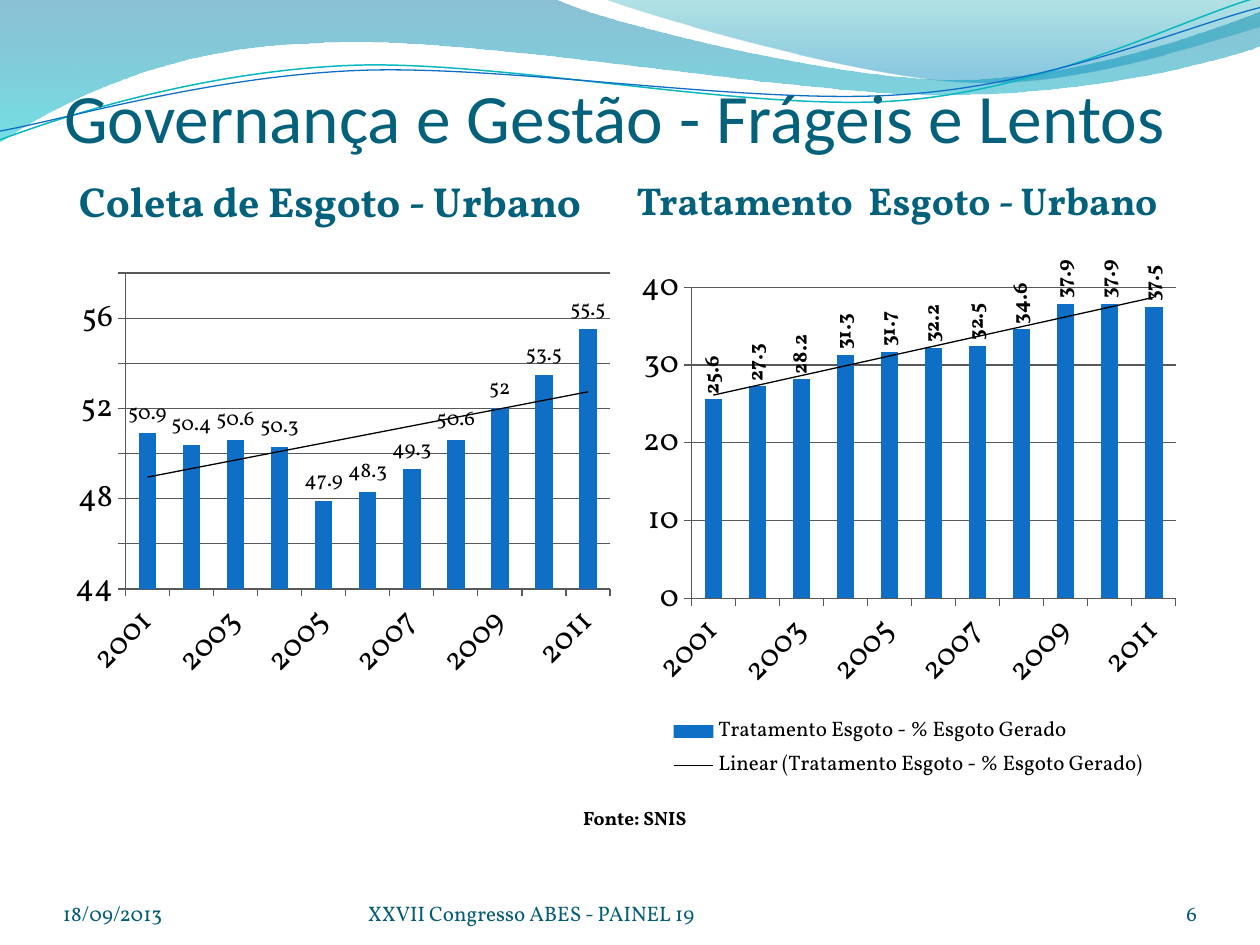
from lxml import etree
from pptx import Presentation
from pptx import util as u
from pptx.chart.data import CategoryChartData
from pptx.dml.color import RGBColor
from pptx.enum import chart as charts, text
from pptx.oxml import parse_xml
from pptx.oxml.ns import nsdecls, qn

TEAL = RGBColor(0x04, 0x61, 0x7B)
FOOTER = RGBColor(0x04, 0x5D, 0x75)
BLUE = RGBColor(0x0F, 0x6F, 0xC6)
AQUA = RGBColor(0x0A, 0xB8, 0xBF)
BLACK = RGBColor(0, 0, 0)
GRAY = RGBColor(0x59, 0x59, 0x59)
FONT = "Vollkorn"
LEFT, RIGHT = text.PP_ALIGN.LEFT, text.PP_ALIGN.RIGHT
MIDDLE, BOTTOM = text.MSO_ANCHOR.MIDDLE, text.MSO_ANCHOR.BOTTOM

# Content
TITLE = "Governança e Gestão - Frágeis e Lentos"
YEARS = [str(year) for year in range(2001, 2012)]
PANELS = [
    dict(heading=" Coleta de Esgoto - Urbano", size=24, name="Series 1",
         values=[50.9, 50.4, 50.6, 50.3, 47.9, 48.3, 49.3, 50.6, 52, 53.5, 55.5],
         top=2.1, height=3.39, legend=False, bold=False, turn=0),
    dict(heading="Tratamento  Esgoto - Urbano", size=22.2,
         name="Tratamento Esgoto - % Esgoto Gerado",
         values=[25.6, 27.3, 28.2, 31.3, 31.7, 32.2, 32.5, 34.6, 37.9, 37.9, 37.5],
         top=2.02, height=4.21, legend=True, bold=True, turn=-90),
]
COLUMNS, COLUMN_WIDTH = (0.51, 5), 4.42
FOOTERS = [
    ("6", 8.67, 0.83, RIGHT),
    ("18/09/2013", 0.5, 2.33, LEFT),
    ("XXVII Congresso ABES - PAINEL 19", 2.92, 3.67, LEFT),
]

# Header waves: a pair is a corner, six numbers are a Bézier curve.
# Gradient stops are position, colour and opacity in percent.
BANDS = [
    ([(0, 0), (4.4, -0.01), (4.76, 0.17, 6.64, 0.63, 7.58, 0.63),
      (8.53, 0.63, 9.58, 0.26, 10, 0.09), (10.01, 0.36),
      (9.83, 0.44, 8.7, 0.76, 7.46, 0.75), (6.22, 0.75, 3.82, 0.28, 2.57, 0.34),
      (1.29, 0.36, 0.46, 0.83, -0.01, 1.13)],
     [(0, "0074A1", 45), (100, "00C6CF", 55)]),
    ([(4.79, -0.01), (5.09, 0.11, 6.82, 0.62, 7.69, 0.65),
      (8.56, 0.69, 9.61, 0.32, 10, 0.21), (10, 0)],
     [(0, "00A1A9", 30), (80, "008BBF", 45)]),
]
WAVES = [
    ([(0, 1.11), (0.48, 0.93, 1.58, 0.57, 2.77, 0.52),
      (3.95, 0.47, 5.93, 0.89, 7.13, 0.8), (8.33, 0.71, 9.38, 0.15, 9.98, -0.02)],
     AQUA, 0.85),
    ([(0, 1.04), (0.47, 0.96, 1.64, 0.61, 2.83, 0.56),
      (4.03, 0.51, 5.97, 0.84, 7.17, 0.75), (8.36, 0.67, 9.41, 0.21, 10, 0.06)],
     BLUE, 0.75),
]


def place(shape, left, top, width, height):
    shape.left, shape.top = u.Inches(left), u.Inches(top)
    shape.width, shape.height = u.Inches(width), u.Inches(height)


def write(shape, words, size, color, font=FONT, bold=False, align=LEFT,
          anchor=text.MSO_ANCHOR.TOP, insets=(0, 0, 0, 0)):
    frame = shape.text_frame
    frame.word_wrap, frame.auto_size = True, text.MSO_AUTO_SIZE.NONE
    frame.vertical_anchor = anchor
    (frame.margin_left, frame.margin_top, frame.margin_right,
     frame.margin_bottom) = [u.Inches(inset) for inset in insets]
    paragraph = frame.paragraphs[0]
    paragraph.alignment = align
    run = paragraph.add_run()
    run.text = words
    run.font.size, run.font.name, run.font.bold = u.Pt(size), font, bold
    run.font.color.rgb = color


def draw(slide, segments, close):
    """Lay every control point as a line, then join each three into a curve."""
    points = [(u.Inches(segment[i]), u.Inches(segment[i + 1]))
              for segment in segments for i in range(0, len(segment), 2)]
    builder = slide.shapes.build_freeform(*points[0])
    builder.add_line_segments(points[1:], close=close)
    shape = builder.convert_to_shape()
    shape.shadow.inherit = False
    lines = iter(list(shape.element.iter(qn("a:lnTo"))))
    for segment in segments[1:]:
        line = next(lines)
        if len(segment) == 6:
            curve = etree.Element(qn("a:cubicBezTo"))
            line.addprevious(curve)
            for part in (line, next(lines), next(lines)):
                curve.append(part[0])
                part.getparent().remove(part)
    return shape


def fill_gradient(shape, stops):
    stop_xml = "".join(
        f'<a:gs pos="{position * 1000}"><a:srgbClr val="{color}">'
        f'<a:alpha val="{opacity * 1000}"/></a:srgbClr></a:gs>'
        for position, color, opacity in stops)
    gradient = parse_xml(f'<a:gradFill {nsdecls("a")}><a:gsLst>{stop_xml}</a:gsLst>'
                         '<a:lin ang="5400000" scaled="0"/></a:gradFill>')
    shape.element.spPr.find(qn("a:custGeom")).addnext(gradient)


def add_chart(slide, panel, left):
    data = CategoryChartData()
    data.categories = YEARS
    data.add_series(panel["name"], panel["values"])
    chart = slide.shapes.add_chart(
        charts.XL_CHART_TYPE.COLUMN_CLUSTERED, u.Inches(left), u.Inches(panel["top"]),
        u.Inches(COLUMN_WIDTH), u.Inches(panel["height"]), data).chart
    chart.font.size, chart.font.name = u.Pt(18), FONT
    chart.font.color.rgb = BLACK
    chart.has_title = False
    chart.has_legend = panel["legend"]
    if panel["legend"]:
        chart.legend.position = charts.XL_LEGEND_POSITION.BOTTOM
        chart.legend.include_in_layout = False
        chart.legend.font.size = u.Pt(12)

    # Axes
    value_axis, category_axis = chart.value_axis, chart.category_axis
    value_axis.has_major_gridlines = True
    for axis in (value_axis, category_axis):
        axis.major_tick_mark = charts.XL_TICK_MARK.OUTSIDE
    for line in (value_axis.format.line, category_axis.format.line,
                 value_axis.major_gridlines.format.line):
        line.color.rgb, line.width = GRAY, u.Pt(0.75)
    category_axis.tick_labels.font.size = u.Pt(18)
    category_axis._element.txPr.bodyPr.set("rot", str(-45 * 60000))

    # Columns and value labels
    plot = chart.plots[0]
    plot.gap_width, plot.vary_by_categories = 150, False
    series = plot.series[0]
    series.format.fill.solid()
    series.format.fill.fore_color.rgb = BLUE
    labels = series.data_labels
    labels.show_value = True
    labels.position = charts.XL_LABEL_POSITION.OUTSIDE_END
    labels.font.size, labels.font.bold = u.Pt(12), panel["bold"]
    labels._element.txPr.bodyPr.set("rot", str(panel["turn"] * 60000))

    # Linear trend line
    series._element.find(qn("c:cat")).addprevious(parse_xml(
        f'<c:trendline {nsdecls("c", "a")}><c:spPr><a:ln w="9525"><a:solidFill>'
        f'<a:srgbClr val="{BLACK}"/></a:solidFill></a:ln></c:spPr>'
        '<c:trendlineType val="linear"/><c:dispRSqr val="0"/><c:dispEq val="0"/>'
        '</c:trendline>'))


def main():
    presentation = Presentation()
    presentation.slide_width, presentation.slide_height = u.Inches(10), u.Inches(7.5)
    slide = presentation.slides.add_slide(presentation.slide_layouts[4])
    holders = {holder.placeholder_format.idx: holder for holder in slide.placeholders}
    for index in (2, 4):
        holders[index].element.getparent().remove(holders[index].element)

    # Header
    decorations = []
    for segments, stops in BANDS:
        band = draw(slide, segments, True)
        fill_gradient(band, stops)
        band.line.fill.background()
        decorations.append(band)
    for segments, color, width in WAVES:
        wave = draw(slide, segments, False)
        wave.fill.background()
        wave.line.color.rgb, wave.line.width = color, u.Pt(width)
        decorations.append(wave)
    for position, shape in enumerate(decorations):
        slide.shapes._spTree.insert(2 + position, shape.element)

    # Title, headings and charts
    place(slide.shapes.title, 0.51, 0, 9, 1.25)
    write(slide.shapes.title, TITLE, 39.6, TEAL, font="Calibri", anchor=BOTTOM,
          insets=(0, 0.05, 0, 0))
    for panel, left, index in zip(PANELS, COLUMNS, (1, 3)):
        place(holders[index], left, 1.23, COLUMN_WIDTH, 0.72)
        write(holders[index], panel["heading"], panel["size"], TEAL, bold=True,
              anchor=MIDDLE, insets=(0.05, 0, 0.05, 0))
        add_chart(slide, panel, left)

    # Source and footer
    source = slide.shapes.add_textbox(0, 0, 0, 0)
    place(source, 4.53, 6.35, 1.26, 0.47)
    write(source, "Fonte: SNIS", 11, BLACK, bold=True, insets=(0.1, 0.05, 0.1, 0.05))
    for words, left, width, align in FOOTERS:
        box = slide.shapes.add_textbox(0, 0, 0, 0)
        place(box, left, 6.95, width, 0.4)
        write(box, words, 12, FOOTER, align=align, anchor=BOTTOM)
    presentation.save("out.pptx")


if __name__ == "__main__":
    main()
